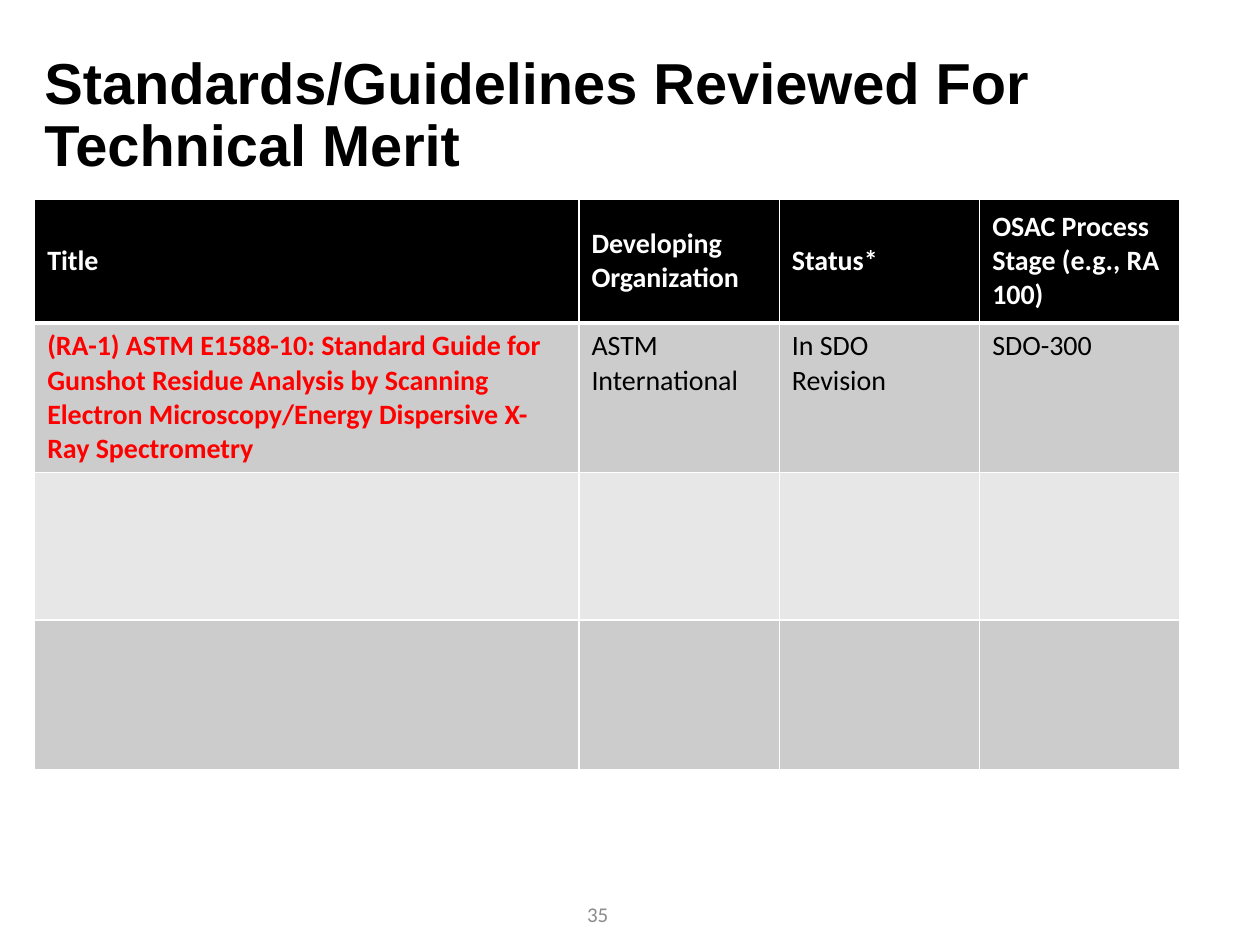
from dataclasses import dataclass
from typing import Any

from lxml.etree import SubElement
from pptx import Presentation
from pptx.dml.color import RGBColor
from pptx.enum.text import MSO_ANCHOR, MSO_AUTO_SIZE, PP_ALIGN
from pptx.oxml.ns import qn
from pptx.util import Cm, Pt

WHITE, BLACK, RED, GREY = "FFFFFF", "000000", "FF0000", "8C8C8C"
DARK, LIGHT = "CCCCCC", "E7E7E7"
WIDTHS = (10.97, 4.04, 4.04, 4.04)


@dataclass
class Style:
    """Look of a piece of text."""
    name: str
    size: float
    color: str
    bold: bool = False


@dataclass
class Row:
    """One table row: height in cm, fill, text styles and words."""
    high: float
    fill: str
    styles: tuple[Style, ...] = ()
    words: tuple[str, ...] = ("",) * 4
    anchor: Any = MSO_ANCHOR.TOP
    base: float = 1


HEAD = Style("Calibri", 16, WHITE, True)
LINK = Style("Calibri", 16, RED, True)
BODY = Style("Calibri", 16, BLACK)
ROWS = (
    Row(2.49, BLACK, (HEAD,) * 4,
        ("Title", "Developing Organization", "Status*",
         "OSAC Process Stage (e.g., RA 100)"), MSO_ANCHOR.MIDDLE, 3),
    Row(3, DARK, (LINK, BODY, BODY, BODY),
        ("(RA-1) ASTM E1588-10: Standard Guide for Gunshot Residue Analysis "
         "by Scanning Electron Microscopy/Energy Dispersive X-Ray Spectrometry",
         "ASTM International", "In SDO Revision", "SDO-300")),
    Row(2.97, LIGHT, (BODY,) * 4),
    Row(3.02, DARK, (BODY,) * 4),
)


def rgb(code: str) -> RGBColor:
    """Turn a hex string into a colour."""
    return RGBColor.from_string(code)


def apply(item: Any, values: dict[str, Any]) -> None:
    """Set each named attribute on an item."""
    for key, value in values.items():
        setattr(item, key, value)


def write(frame: Any, text: str, style: Style, **layout: Any) -> None:
    """Put styled text in a frame, with paragraph layout values."""
    para = frame.paragraphs[0]
    font = para.font
    if text:
        run = para.add_run()
        run.text = text
        font = run.font
    apply(para, layout)
    apply(font, {"name": style.name, "size": Pt(style.size), "bold": style.bold})
    font.color.rgb = rgb(style.color)


def place(shape: Any, left: float, top: float, width: float, height: float) -> None:
    """Move and size a shape in cm."""
    apply(shape, {"left": Cm(left), "top": Cm(top),
                  "width": Cm(width), "height": Cm(height)})
    apply(shape.text_frame, {"word_wrap": True, "auto_size": MSO_AUTO_SIZE.NONE,
                             "vertical_anchor": MSO_ANCHOR.MIDDLE})


def edge(cell: Any, **sides: float) -> None:
    """Draw white cell borders with widths in points."""
    props = cell._tc.get_or_add_tcPr()
    for side, width in sides.items():
        line = SubElement(props, qn(f"a:ln{side}"), w=str(Pt(width)))
        fill = SubElement(line, qn("a:solidFill"))
        SubElement(fill, qn("a:srgbClr"), val=WHITE)


def grid(slide: Any, left: float, top: float) -> None:
    """Add the table of standards."""
    table = slide.shapes.add_table(
        len(ROWS), len(WIDTHS), Cm(left), Cm(top),
        Cm(sum(WIDTHS)), Cm(sum(row.high for row in ROWS))).table
    for col, width in zip(table.columns, WIDTHS):
        col.width = Cm(width)
    above = 1
    for line, row in zip(table.rows, ROWS):
        line.height = Cm(row.high)
        for cell, text, style in zip(line.cells, row.words, row.styles):
            edge(cell, L=1, R=1, T=above, B=row.base)
            cell.fill.solid()
            cell.fill.fore_color.rgb = rgb(row.fill)
            cell.vertical_anchor = row.anchor
            write(cell.text_frame, text, style)
        above = row.base


def main() -> None:
    """Build and save the slide."""
    deck = Presentation()
    apply(deck, {"slide_width": Cm(25.4), "slide_height": Cm(19.05)})
    slide = deck.slides.add_slide(deck.slide_layouts[5])
    title = slide.shapes.title
    place(title, 0.64, 0.51, 21.89, 3.68)
    write(title.text_frame, "Standards/Guidelines Reviewed For Technical Merit",
          Style("Arial", 33, BLACK, True),
          alignment=PP_ALIGN.LEFT, line_spacing=0.9)
    grid(slide, 0.7, 4.02)
    page = slide.shapes.add_textbox(0, 0, 0, 0)
    place(page, 9.19, 17.91, 5.72, 1.02)
    write(page.text_frame, "35", Style("Calibri", 12, GREY),
          alignment=PP_ALIGN.CENTER)
    deck.save("out.pptx")


if __name__ == "__main__":
    main()
